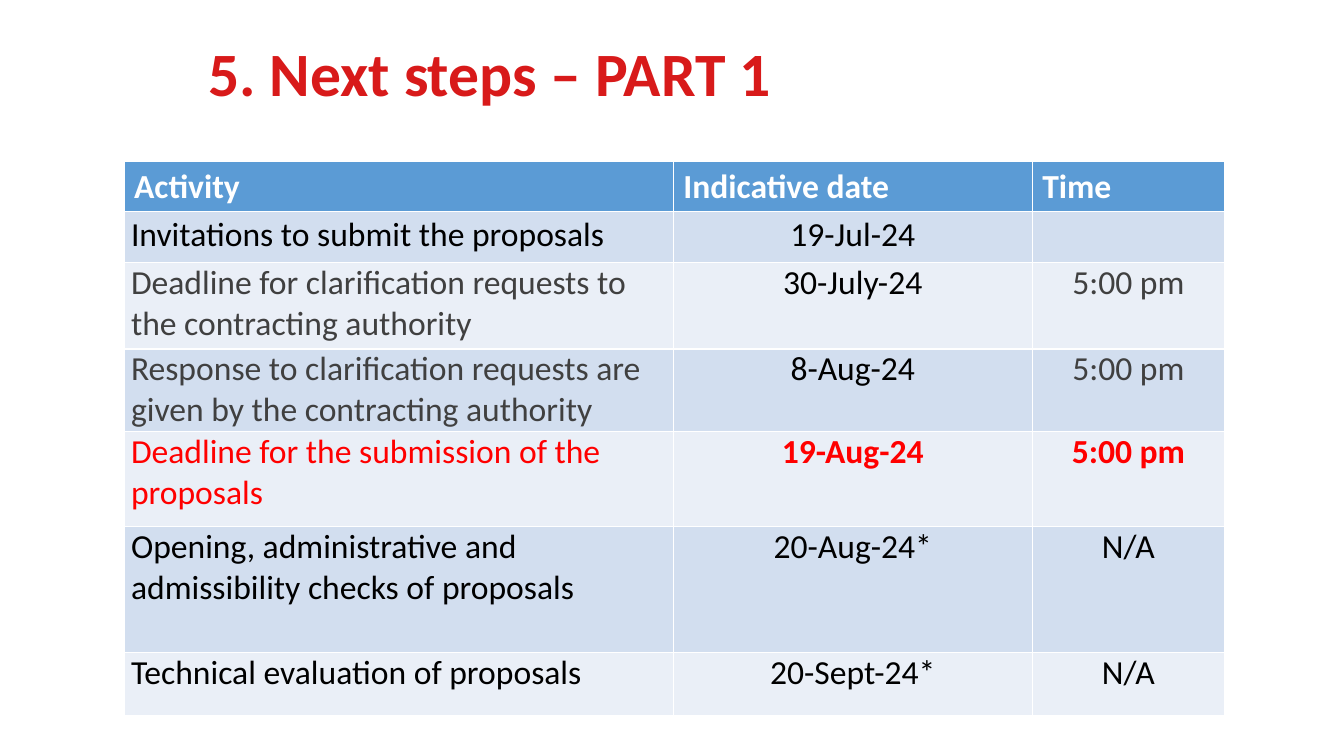
from pptx import Presentation
from pptx.dml.color import RGBColor as RGB
from pptx.enum.text import MSO_ANCHOR as Anchor, PP_ALIGN as Align
from pptx.util import Pt

COLORS = {
    "title": "D81A1A", "head": "5B9BD5", "odd": "D2DEEF", "even": "EAEFF7",
    "white": "FFFFFF", "black": "000000", "gray": "404040", "red": "FF0000",
}
WIDTHS = [392.4, 256.3, 137.5]
HEADS = ["Activity", "Indicative date", "Time"]
# Height, texts and text colours of each row
STEPS = [
    (36, ["Invitations to submit the proposals", "19-Jul-24", ""],
     ["black", "black", "black"]),
    (62, ["Deadline for clarification requests to the contracting authority",
          "30-July-24", "5:00 pm"], ["gray", "black", "gray"]),
    (59, ["Response to clarification requests are given by the contracting authority",
          "8-Aug-24", "5:00 pm"], ["gray", "black", "gray"]),
    (67.7, ["Deadline for the submission of the proposals", "19-Aug-24", "5:00 pm"],
     ["red", "red", "red"]),
    (90, ["Opening, administrative and admissibility checks of proposals",
          "20-Aug-24*", "N/A"], ["black", "black", "black"]),
    (45, ["Technical evaluation of proposals", "20-Sept-24*", "N/A"],
     ["black", "black", "black"]),
]


def style(para, size, color, bold=False):
    font = para.font
    font.name = "Calibri"
    font.size = Pt(size)
    font.bold = bold
    font.color.rgb = RGB.from_string(COLORS[color])


def add_title(slide, text):
    frame = slide.shapes.add_textbox(Pt(141.8), Pt(27.4), Pt(680.4), Pt(54.7)).text_frame
    frame.word_wrap = True
    frame.vertical_anchor = Anchor.MIDDLE
    para = frame.paragraphs[0]
    para.text = text
    para.line_spacing = 0.9
    style(para, 44, "title", True)


def fill_cell(cell, text, fill, color, bold):
    cell.fill.solid()
    cell.fill.fore_color.rgb = RGB.from_string(COLORS[fill])
    para = cell.text_frame.paragraphs[0]
    para.text = text
    style(para, 24, color, bold)
    return para


def add_steps(slide):
    heights = [36] + [step[0] for step in STEPS]
    table = slide.shapes.add_table(
        len(heights), len(WIDTHS), Pt(88.6), Pt(115.2),
        Pt(sum(WIDTHS)), Pt(sum(heights))).table
    for col, width in zip(table.columns, WIDTHS):
        col.width = Pt(width)
    for row, height in zip(table.rows, heights):
        row.height = Pt(height)
    for c, head in enumerate(HEADS):
        fill_cell(table.cell(0, c), head, "head", "white", True)
    for r, (_, texts, colors) in enumerate(STEPS, 1):
        for c, (text, color) in enumerate(zip(texts, colors)):
            cell = table.cell(r, c)
            cell.margin_left = cell.margin_right = Pt(5)
            cell.margin_top = cell.margin_bottom = 0
            para = fill_cell(cell, text, "odd" if r % 2 else "even",
                             color, color == "red" and c > 0)
            para.alignment = Align.CENTER if c else Align.LEFT
            if r == 1:
                para.line_spacing = 1.07


def main():
    deck = Presentation()
    deck.slide_width, deck.slide_height = Pt(960), Pt(540)
    slide = deck.slides.add_slide(deck.slide_layouts[6])
    add_title(slide, "5. Next steps – PART 1")
    add_steps(slide)
    deck.save("out.pptx")


if __name__ == "__main__":
    main()
